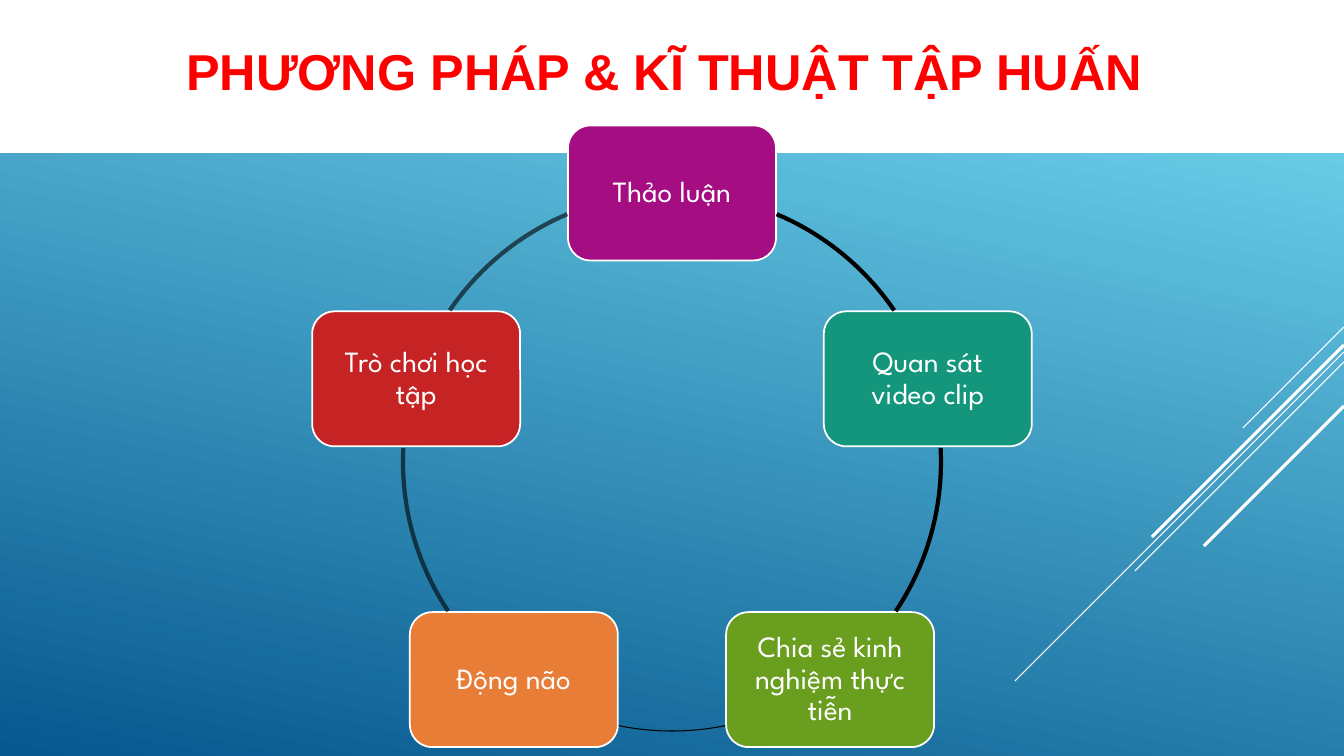
import dataclasses
import math

import lxml.etree
import pptx
import pptx.dml.color
import pptx.enum.shapes
import pptx.enum.text
import pptx.oxml.ns
import pptx.util

SLIDE_W, SLIDE_H = 1344, 756
EMU_PER_PX = 12192000 / SLIDE_W


@dataclasses.dataclass(frozen=True)
class Theme:
    sky: str = "6ED2EB"
    deep: str = "06588E"
    white: str = "FFFFFF"
    heading: str = "FF0000"
    ring: str = "000000"
    heading_font: str = "Arial"
    body_font: str = "League Spartan"
    heading_pt: int = 36
    body_pt: int = 21
    border_pt: float = 1.25
    thin_pt: float = 0.75
    thick_pt: float = 2.25
    ring_pt: int = 3


THEME = Theme()

# Clockwise from the top: label and colour
METHODS = [
    ("Thảo luận", "A50E82"),
    ("Quan sát video clip", "14967C"),
    ("Chia sẻ kinh nghiệm thực tiễn", "6A9E1F"),
    ("Động não", "E87D37"),
    ("Trò chơi học tập", "C62324"),
]
# Start and end in degrees clockwise from east, line width, opacity in percent
ARCS = [
    (292.9, 325.7, THEME.ring_pt, 100),
    (357, 33.7, THEME.ring_pt, 100),
    (78.6, 101.4, THEME.thin_pt, 100),
    (146.3, 183, THEME.ring_pt, 60),
    (214.3, 247.1, THEME.ring_pt, 60),
]
# Start height at the right edge, reach to the lower left, line width
RAYS = [
    (327, 101, THEME.thin_pt),
    (352, 329, THEME.thin_pt),
    (362, 209, THEME.thin_pt),
    (345, 192, THEME.thick_pt),
    (406, 140, THEME.thick_pt),
]


def px(*lengths):
    return [pptx.util.Emu(round(length * EMU_PER_PX)) for length in lengths]


def rgb(code):
    return pptx.dml.color.RGBColor.from_string(code)


def set_line(line, color, width):
    line.color.rgb = rgb(color)
    line.width = pptx.util.Pt(width)


def set_font(font, name, size, color, bold=False):
    font.name = name
    font.size = pptx.util.Pt(size)
    font.color.rgb = rgb(color)
    font.bold = bold


def paint_background(slide):
    fill = slide.background.fill
    fill.gradient()
    fill.gradient_angle = 258
    for stop, color, position in zip(
        fill.gradient_stops, (THEME.sky, THEME.deep), (0.1, 1)
    ):
        stop.color.rgb = rgb(color)
        stop.position = position


def add_heading(slide, text, left, top, width, height):
    heading = slide.shapes.title
    heading.left, heading.top, heading.width, heading.height = px(
        left, top, width, height
    )
    heading.fill.solid()
    heading.fill.fore_color.rgb = rgb(THEME.white)
    frame = heading.text_frame
    frame.text = text
    frame.vertical_anchor = pptx.enum.text.MSO_ANCHOR.MIDDLE
    paragraph = frame.paragraphs[0]
    paragraph.alignment = pptx.enum.text.PP_ALIGN.CENTER
    set_font(paragraph.font, THEME.heading_font, THEME.heading_pt, THEME.heading, True)


def add_rays(slide, right):
    """Draw the 45-degree lines running in from the right edge."""
    for top, reach, width in RAYS:
        ray = slide.shapes.add_connector(
            pptx.enum.shapes.MSO_CONNECTOR.STRAIGHT,
            *px(right, top, right - reach, top + reach),
        )
        set_line(ray.line, THEME.white, width)
        properties = ray._element.spPr
        lxml.etree.SubElement(properties, pptx.oxml.ns.qn("a:effectLst"))


def add_method(slide, label, color, left, top, width, height):
    card = slide.shapes.add_shape(
        pptx.enum.shapes.MSO_SHAPE.ROUNDED_RECTANGLE, *px(left, top, width, height)
    )
    card.shadow.inherit = False
    card.fill.solid()
    card.fill.fore_color.rgb = rgb(color)
    set_line(card.line, THEME.white, THEME.border_pt)
    frame = card.text_frame
    frame.text = label
    frame.word_wrap = True
    frame.vertical_anchor = pptx.enum.text.MSO_ANCHOR.MIDDLE
    (inset,) = px(16)
    frame.margin_left = frame.margin_right = inset
    frame.margin_top = frame.margin_bottom = inset
    paragraph = frame.paragraphs[0]
    paragraph.alignment = pptx.enum.text.PP_ALIGN.CENTER
    paragraph.line_spacing = 0.9
    set_font(paragraph.font, THEME.body_font, THEME.body_pt, THEME.white)


def add_arc(slide, start, end, width, opacity, left, top, diameter):
    arc = slide.shapes.add_shape(
        pptx.enum.shapes.MSO_SHAPE.ARC, *px(left, top, diameter, diameter)
    )
    arc.shadow.inherit = False
    arc.fill.background()
    # Angles are stored in 60000ths of a degree, adjustments in 100000ths
    arc.adjustments[0] = start * 0.6
    arc.adjustments[1] = end * 0.6
    set_line(arc.line, THEME.ring, width)
    if opacity < 100:
        color = arc.line._ln.find(".//" + pptx.oxml.ns.qn("a:srgbClr"))
        alpha = lxml.etree.SubElement(color, pptx.oxml.ns.qn("a:alpha"))
        alpha.set("val", str(opacity * 1000))


def add_cycle(slide, left, top, diameter, card_width=208, card_height=135):
    """Centre the method cards on a ring and join them with arcs."""
    radius = diameter / 2
    for index, (label, color) in enumerate(METHODS):
        angle = math.tau * index / len(METHODS)
        center_x = left + radius + radius * math.sin(angle)
        center_y = top + radius - radius * math.cos(angle)
        add_method(
            slide, label, color,
            center_x - card_width / 2, center_y - card_height / 2,
            card_width, card_height,
        )
    for arc in ARCS:
        add_arc(slide, *arc, left, top, diameter)


def main():
    deck = pptx.Presentation()
    deck.slide_width, deck.slide_height = px(SLIDE_W, SLIDE_H)
    slide = deck.slides.add_slide(deck.slide_layouts[5])
    paint_background(slide)
    add_rays(slide, SLIDE_W)
    add_heading(slide, "PHƯƠNG PHÁP & KĨ THUẬT TẬP HUẤN", -15, -13, 1359, 166)
    add_cycle(slide, 403, 193, 538)
    deck.save("out.pptx")


if __name__ == "__main__":
    main()
